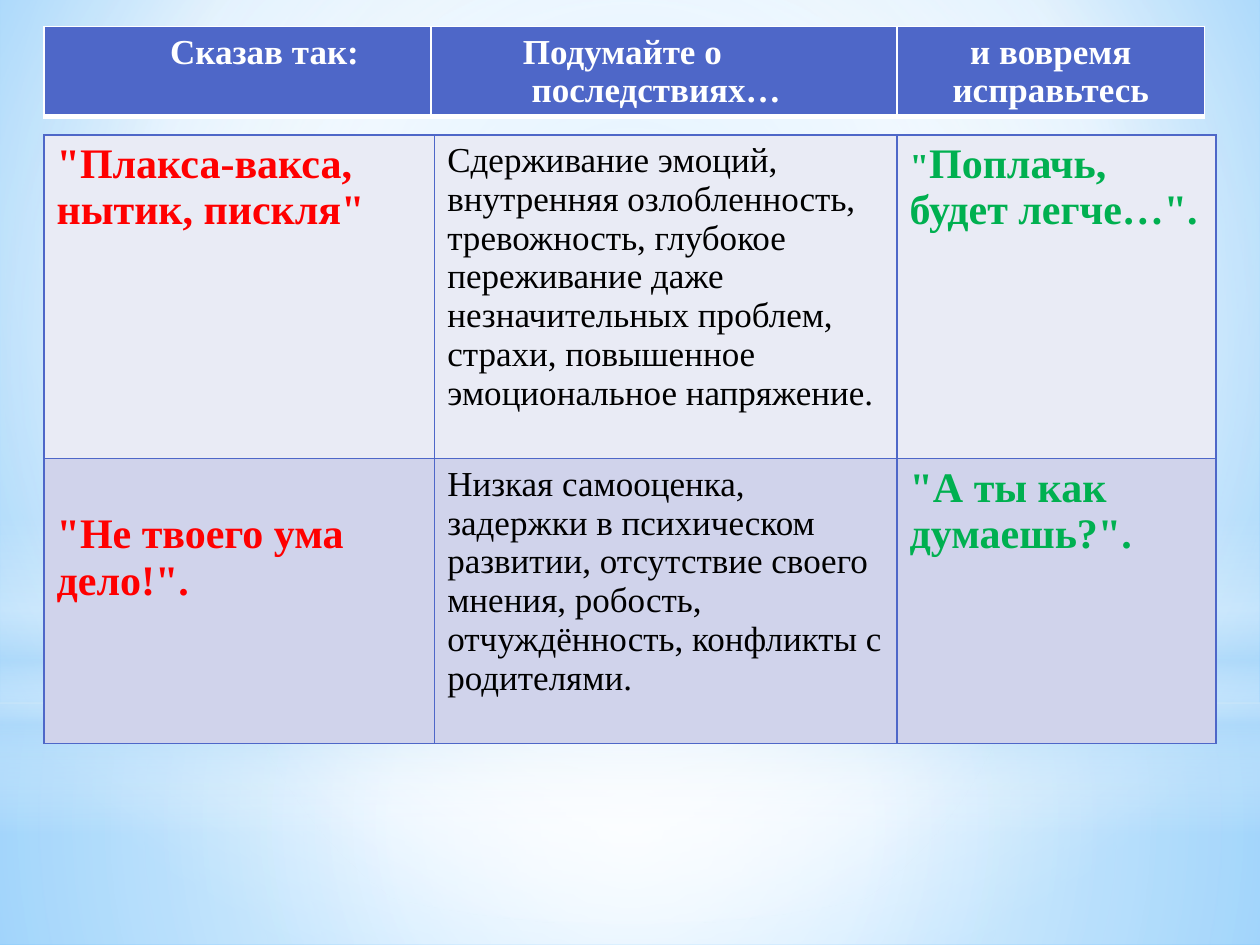
import pptx
import pptx.dml.color
import pptx.enum.shapes
import pptx.enum.text
import pptx.oxml
import pptx.oxml.ns
import pptx.util
from dataclasses import dataclass

Inches = pptx.util.Inches
Kind = pptx.enum.shapes.MSO_SHAPE
Align = pptx.enum.text.PP_ALIGN
qn = pptx.oxml.ns.qn
NS = pptx.oxml.ns.nsdecls("a")


@dataclass(frozen=True)
class Theme:
    font: str = "Times New Roman"
    blue: str = "4E67C8"
    white: str = "FFFFFF"
    black: str = "000000"
    red: str = "FF0000"
    green: str = "00B050"
    light: str = "E9EBF5"
    dark: str = "D0D3EB"
    sky: str = "B4DCFA"
    pale: str = "9ED5FF"
    deep: str = "5BB9FF"
    big: int = 24
    small: int = 20


class Deck:
    def __init__(self, theme, slide):
        self.theme = theme
        self.slide = slide

    def grade(self, root, stops, rect=None):
        """Swap the solid fill under root for a gradient: round, or top to bottom."""
        marks = "".join(
            f'<a:gs pos="{pos * 1000}"><a:srgbClr val="{hue}">'
            f'<a:alpha val="{alpha * 1000}"/></a:srgbClr></a:gs>'
            for pos, hue, alpha in stops)
        if rect:
            sides = " ".join(f'{k}="{v * 1000}"' for k, v in zip("ltrb", rect))
            way = f'<a:path path="circle"><a:fillToRect {sides}/></a:path>'
        else:
            way = '<a:lin ang="5400000" scaled="0"/>'
        fill = root.find(".//" + qn("a:solidFill"))
        fill.getparent().replace(fill, pptx.oxml.parse_xml(
            f'<a:gradFill {NS} rotWithShape="1"><a:gsLst>{marks}</a:gsLst>{way}</a:gradFill>'))

    def back(self, stops, rect):
        self.slide.background.fill.solid()
        self.grade(self.slide.element, stops, rect)

    def glow(self, kind, top, high, stops, rect=None):
        shape = self.slide.shapes.add_shape(
            kind, 0, Inches(top), Inches(10), Inches(high))
        shape.shadow.inherit = False
        shape.line.fill.background()
        shape.fill.solid()
        self.grade(shape.element, stops, rect)

    def edge(self, cell, hue, widths):
        props = cell._tc.get_or_add_tcPr()
        for side, width in zip("LRTB", widths):
            props.append(pptx.oxml.parse_xml(
                f'<a:ln{side} {NS} w="{pptx.util.Pt(width)}"><a:solidFill>'
                f'<a:srgbClr val="{hue}"/></a:solidFill></a:ln{side}>'))

    def text(self, para, words, size, hue, bold):
        run = para.add_run()
        run.text = words
        look = {"name": self.theme.font, "size": pptx.util.Pt(size), "bold": bold}
        for key, value in look.items():
            setattr(run.font, key, value)
        run.font.color.rgb = pptx.dml.color.RGBColor.from_string(hue)

    def table(self, left, top, cols, rows, cells, fills, hue, widths):
        """Each cell is a list of paragraphs: (runs, indent, align)."""
        frame = self.slide.shapes.add_table(
            len(rows), len(cols), Inches(left), Inches(top),
            Inches(sum(cols)), Inches(sum(rows)))
        grid = frame.table
        grid.first_row = grid.horz_banding = False
        for col, wide in zip(grid.columns, cols):
            col.width = Inches(wide)
        for r, high in enumerate(rows):
            grid.rows[r].height = Inches(high)
            for c, paras in enumerate(cells[r]):
                cell = grid.cell(r, c)
                self.edge(cell, hue, widths)
                cell.fill.solid()
                cell.fill.fore_color.rgb = pptx.dml.color.RGBColor.from_string(fills[r])
                for n, (runs, indent, align) in enumerate(paras):
                    body = cell.text_frame
                    para = body.add_paragraph() if n else body.paragraphs[0]
                    para.alignment = align
                    para._p.get_or_add_pPr().set("marL", str(Inches(indent)))
                    for run in runs:
                        self.text(para, *run)
        return grid


def main():
    t = Theme()
    prs = pptx.Presentation()
    prs.slide_width, prs.slide_height = Inches(10), Inches(7.5)
    deck = Deck(t, prs.slides.add_slide(prs.slide_layouts[6]))

    # Sky backdrop
    mid = (50, 50, 50, 50)
    deck.back([(0, t.pale, 100), (60, t.white, 100), (100, t.deep, 100)],
              (20, 10, 20, 60))
    deck.glow(Kind.RECTANGLE, 5.58, 1.92,
              [(0, t.white, 91), (37, t.white, 76), (100, t.sky, 79)], mid)
    deck.glow(Kind.RECTANGLE, 0, 5.58,
              [(0, t.white, 89), (48, t.white, 62), (100, t.sky, 79)], mid)
    deck.glow(Kind.RECTANGLE, 4.12, 2.5,
              [(0, t.white, 0), (29, t.white, 30), (45, t.sky, 40),
               (55, t.white, 26), (65, t.sky, 60), (100, t.white, 0)])
    deck.glow(Kind.OVAL, 1.75, 5.58, [(0, t.white, 100), (56, t.white, 0)], mid)

    def head(text, indent=0, align=Align.LEFT):
        return [(text, t.small, t.white, True)], indent, align

    def plain(text):
        return [([(text, t.small, t.black, False)], 0, Align.LEFT)]

    def loud(hue, *parts):
        return [([(text, size, hue, True) for text, size in parts], 0, Align.LEFT)]

    # Phrases, effects and better answers
    cells = [
        [loud(t.red, ('"Плакса-вакса, нытик, пискля"', t.big)),
         plain("Сдерживание эмоций, внутренняя озлобленность, тревожность, "
               "глубокое переживание даже незначительных проблем, страхи, "
               "повышенное эмоциональное напряжение."),
         loud(t.green, ('"', t.small), ('Поплачь, будет легче…".', t.big))],
        [loud(t.red, ('"Не твоего ума дело!".', t.big)),
         plain("Низкая самооценка, задержки в психическом развитии, отсутствие "
               "своего мнения, робость, отчуждённость, конфликты с родителями."),
         loud(t.green, ('"А ты как думаешь?".', t.big))],
    ]
    grid = deck.table(0.35, 1.07, [3.1, 3.67, 2.53], [2.57, 2.26], cells,
                      [t.light, t.dark], t.blue, (1, 1, 1, 1))
    grid.cell(1, 0).margin_top = Inches(0.42)

    # Header strip
    heads = [[
        [head("Сказав так:", 0.9)],
        [head("Подумайте о", 0.63), head("последствиях…", 0.7)],
        [head("и вовремя исправьтесь", align=Align.CENTER)],
    ]]
    deck.table(0.35, 0.21, [3.07, 3.7, 2.44], [0.71], heads,
               [t.blue], t.white, (1, 1, 1, 3))

    prs.save("out.pptx")


if __name__ == "__main__":
    main()
